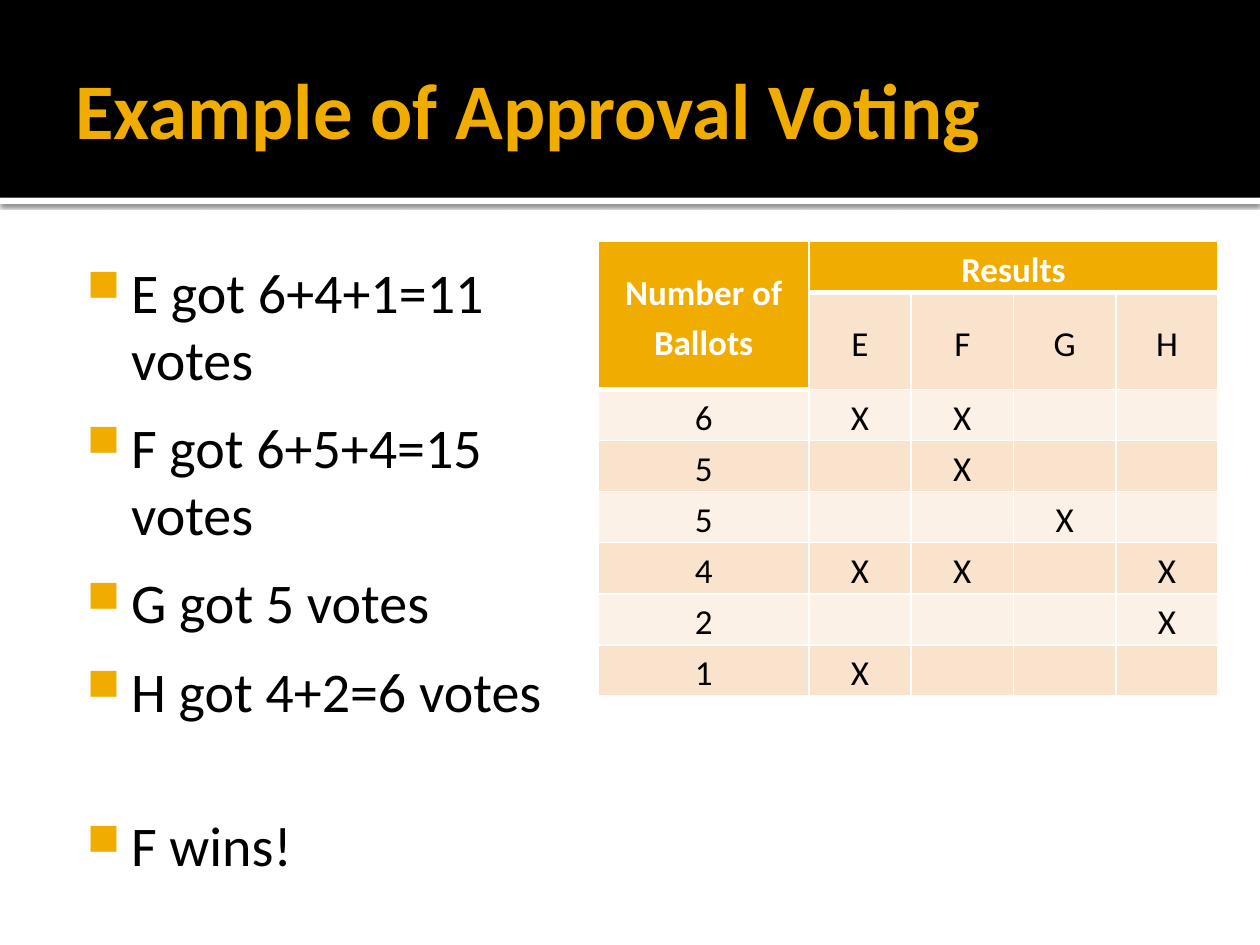
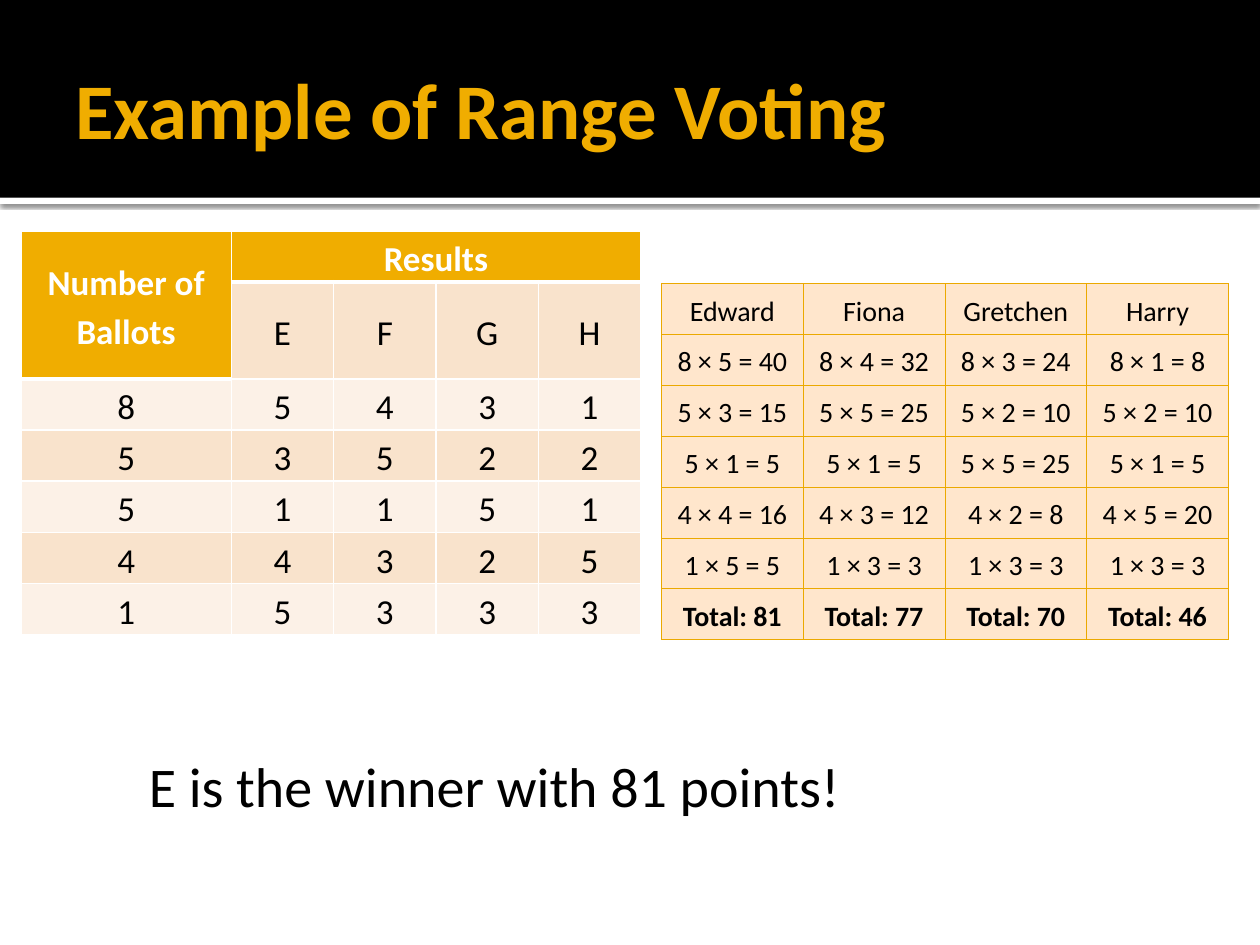
import dataclasses

import lxml.etree
import pptx
import pptx.dml.color
import pptx.enum.shapes
import pptx.enum.text
import pptx.oxml.ns
import pptx.util

Pt = pptx.util.Pt
qn = pptx.oxml.ns.qn
ALIGN = pptx.enum.text.PP_ALIGN
ANCHOR = pptx.enum.text.MSO_ANCHOR


@dataclasses.dataclass(frozen=True)
class Theme:
    font: str = "Calibri"
    accent: str = "F0AD00"
    rule: str = "EBA900"
    black: str = "000000"
    white: str = "FFFFFF"
    dark_row: str = "F9E3CC"
    light_row: str = "FCF1E7"
    score_fill: str = "FFE6CC"
    title_size: float = 45
    body_size: float = 32
    ballot_size: float = 20
    score_size: float = 16


def rgb(color):
    return pptx.dml.color.RGBColor.from_string(color)


def add_node(parent, tag, **attributes):
    return lxml.etree.SubElement(parent, qn(tag), attributes)


class SlideBuilder:
    def __init__(self, theme):
        self.theme = theme
        self.deck = pptx.Presentation()
        self.deck.slide_width = Pt(720)
        self.deck.slide_height = Pt(540)
        self.page = None

    def new_page(self, title):
        self.page = self.deck.slides.add_slide(self.deck.slide_layouts[6])
        self.page.background.fill.solid()
        self.page.background.fill.fore_color.rgb = rgb(self.theme.white)
        self.shadow(self.band(113, 3.6, self.theme.white))
        self.band(0, 113, self.theme.black)
        frame = self.frame(36, 12.24, 648, 98.64, (7.2, 3.6, 3.6, 3.6))
        frame.vertical_anchor = ANCHOR.MIDDLE
        self.span(frame.paragraphs[0], title, self.theme.title_size,
                  self.theme.accent, bold=True)

    def band(self, top, height, color):
        shape = self.page.shapes.add_shape(
            pptx.enum.shapes.MSO_SHAPE.RECTANGLE, 0, Pt(top), Pt(720), Pt(height))
        shape.shadow.inherit = False
        shape.fill.solid()
        shape.fill.fore_color.rgb = rgb(color)
        shape.line.fill.background()
        return shape

    def shadow(self, shape):
        effects = shape._element.spPr.find(qn("a:effectLst"))
        outer = add_node(effects, "a:outerShdw", blurRad=str(Pt(2.5)),
                         dist=str(Pt(0.8)), dir="5400000", rotWithShape="0")
        color = add_node(outer, "a:srgbClr", val=self.theme.black)
        add_node(color, "a:alpha", val="60000")

    def frame(self, left, top, width, height, insets=(7.2, 3.6, 7.2, 3.6)):
        box = self.page.shapes.add_textbox(Pt(left), Pt(top), Pt(width), Pt(height))
        frame = box.text_frame
        frame.word_wrap = True
        (frame.margin_left, frame.margin_top,
         frame.margin_right, frame.margin_bottom) = map(Pt, insets)
        return frame

    def span(self, para, text, size, color, bold=False):
        span = para.add_run()
        span.text = text
        span.font.name = self.theme.font
        span.font.size = Pt(size)
        span.font.bold = bold
        span.font.color.rgb = rgb(color)

    def statement(self, text, left, top, width, height):
        frame = self.frame(left, top, width, height)
        self.span(frame.paragraphs[0], text, self.theme.body_size, self.theme.black)

    def bullets(self, items, conclusion, left, top, width, height):
        frame = self.frame(left, top, width, height, (4.32, 7.2, 7.2, 3.6))
        for index, text in enumerate([*items, conclusion]):
            para = frame.add_paragraph() if index else frame.paragraphs[0]
            if text == conclusion:
                para.space_before = Pt(38)
            else:
                para.space_after = Pt(12)
            properties = para._p.get_or_add_pPr()
            properties.set("marL", str(Pt(34.56)))
            properties.set("indent", str(Pt(-25.2)))
            color = add_node(properties, "a:buClr")
            add_node(color, "a:srgbClr", val=self.theme.accent)
            add_node(properties, "a:buSzPct", val="80000")
            add_node(properties, "a:buChar", char="■")
            self.span(para, text, self.theme.body_size, self.theme.black)

    def table(self, left, top, widths, row_height, row_count):
        holder = self.page.shapes.add_table(
            row_count, len(widths), Pt(left), Pt(top),
            Pt(sum(widths)), Pt(row_height * row_count))
        table = holder.table
        table.first_row = table.horz_banding = False
        for column, width in zip(table.columns, widths):
            column.width = Pt(width)
        for row in table.rows:
            row.height = Pt(row_height)
        return table

    def cell(self, cell, text, size, fill, line, weights, color=None, bold=False):
        cell.margin_left = cell.margin_right = Pt(5)
        cell.margin_top = cell.margin_bottom = 0
        cell.vertical_anchor = ANCHOR.MIDDLE
        cell.fill.solid()
        cell.fill.fore_color.rgb = rgb(fill)
        self.borders(cell, line, weights)
        if text:
            para = cell.text_frame.paragraphs[0]
            para.alignment = ALIGN.CENTER
            para.line_spacing = 1.15
            self.span(para, text, size, color or self.theme.black, bold)

    def borders(self, cell, color, weights):
        properties = cell._tc.get_or_add_tcPr()
        for index, (side, weight) in enumerate(zip("LRTB", weights)):
            edge = lxml.etree.Element(qn(f"a:ln{side}"), w=str(Pt(weight)))
            add_node(add_node(edge, "a:solidFill"), "a:srgbClr", val=color)
            properties.insert(index, edge)

    def ballot_table(self, left, top, ballots):
        theme = self.theme
        rows = [["Number of Ballots", "Results", "", "", ""], ["", *"EFGH"], *ballots]
        table = self.table(left, top, [120.2] + [58.5] * 4, 29.25, len(rows))
        for r, row in enumerate(rows):
            for c, text in enumerate(row):
                header = r == 0 or (r == 1 and c == 0)
                banded = theme.dark_row if r % 2 else theme.light_row
                under_header = r == 1 and c > 0 or r == 2 and c == 0
                ends_header = r == 0 and c > 0 or r == 1 and c == 0
                self.cell(
                    table.cell(r, c), text, theme.ballot_size,
                    theme.accent if header else banded, theme.white,
                    (1, 1, 3 if under_header else 1, 3 if ends_header else 1),
                    theme.white if header else theme.black, header)
        table.cell(0, 0).merge(table.cell(1, 0))
        table.cell(0, 1).merge(table.cell(0, 4))

    def score_table(self, left, top, candidates, ballots):
        theme = self.theme
        rows = [candidates]
        totals = [0] * len(candidates)
        for count, *scores in ballots:
            products = [int(count) * int(score) for score in scores]
            rows.append([f"{count} × {score} = {product}"
                         for score, product in zip(scores, products)])
            totals = [total + product for total, product in zip(totals, products)]
        rows.append([f"Total: {total}" for total in totals])
        table = self.table(left, top, [81] * len(candidates), 29.1, len(rows))
        for r, row in enumerate(rows):
            for c, text in enumerate(row):
                self.cell(table.cell(r, c), text, theme.score_size, theme.score_fill,
                          theme.rule, (0.5,) * 4, bold=r == len(rows) - 1)


def main():
    slides = SlideBuilder(Theme())

    slides.new_page("Example of Approval Voting")
    slides.bullets(
        ["E got 6+4+1=11 votes", "F got 6+5+4=15 votes",
         "G got 5 votes", "H got 4+2=6 votes"],
        "F wins!", 36, 139.68, 306, 364.32)
    approvals = [("6", "EF"), ("5", "F"), ("5", "G"),
                 ("4", "EFH"), ("2", "H"), ("1", "E")]
    slides.ballot_table(342, 138, [
        [count, *("X" if name in approved else "" for name in "EFGH")]
        for count, approved in approvals])

    slides.new_page("Example of Range Voting")
    ratings = ["85431", "53522", "51151", "44325", "15333"]
    slides.ballot_table(12, 132, ratings)
    slides.score_table(378, 162, ["Edward", "Fiona", "Gretchen", "Harry"], ratings)
    slides.statement("E is the winner with 81 points!", 78, 426, 462, 46)

    slides.deck.save("out.pptx")


if __name__ == "__main__":
    main()
